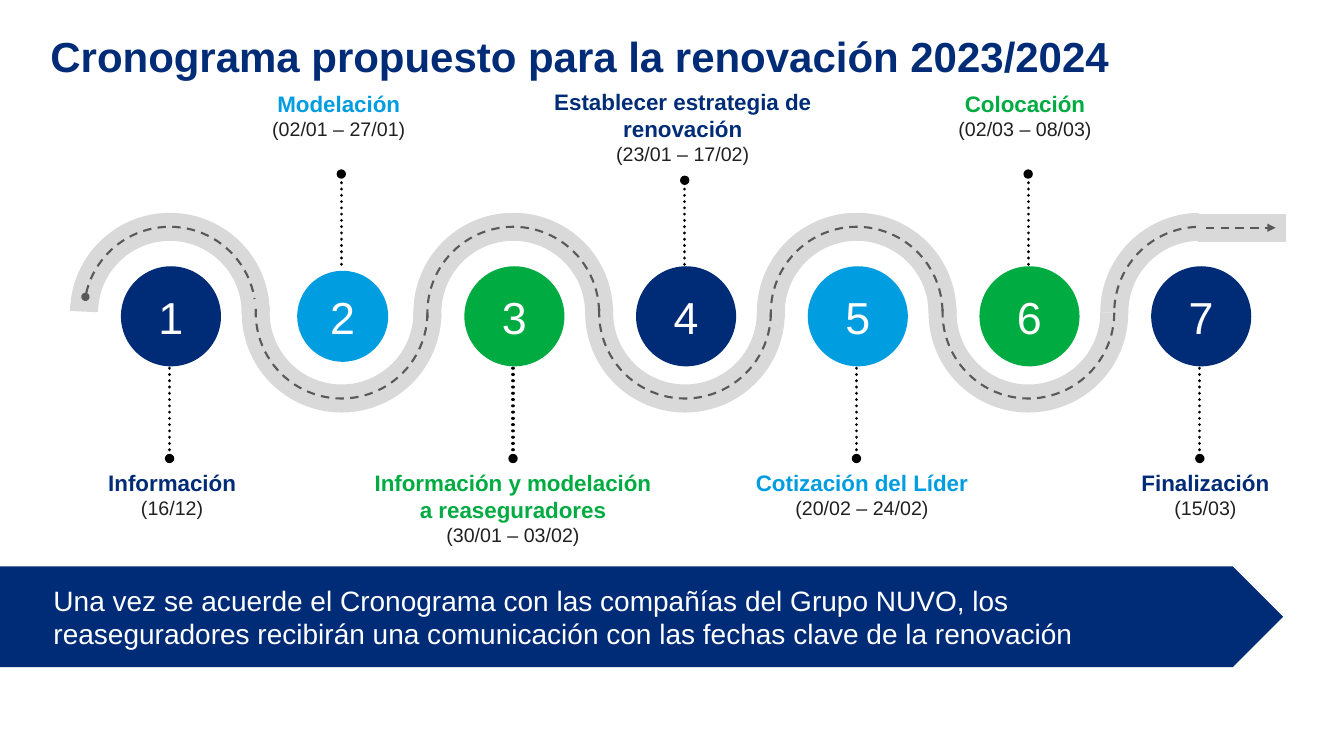
from lxml import etree
from pptx import Presentation
from pptx import util as u
from pptx.dml import color
from pptx.enum import dml, shapes, text
from pptx.oxml import ns

COLORS = {
    "navy": "002C77",
    "sky": "009DE0",
    "green": "00AC41",
    "road": "D9D9D9",
    "dash": "595959",
    "ink": "202020",
    "black": "000000",
    "white": "FFFFFF",
}
FONT = "Arial"
PITCH = 122.65
BADGE = 71.5
PIN = 64.5

STEPS = [
    ("Información", "(16/12)", "navy", 176, 1.8, 0, 0),
    ("Modelación", "(02/01 – 27/01)", "sky", 220, -1.8, 0, 3.25),
    ("Información y modelación a reaseguradores", "(30/01 – 03/02)", "green", 217, 0, 0, 0),
    ("Establecer estrategia de renovación", "(23/01 – 17/02)", "navy", 220, -1.4, 4.5, 0),
    ("Cotización del Líder", "(20/02 – 24/02)", "sky", 194, 4, 0, 0),
    ("Colocación", "(02/03 – 08/03)", "green", 220, -2.2, 0, 0),
    ("Finalización", "(15/03)", "navy", 194, 4, 0, 0),
]


def rgb(name):
    return color.RGBColor.from_string(COLORS[name])


def pts(*lengths):
    return [u.Pt(length) for length in lengths]


def set_font(paragraph, size, name, bold=False):
    paragraph.font.name = FONT
    paragraph.font.size = u.Pt(size)
    paragraph.font.bold = bold
    paragraph.font.color.rgb = rgb(name)


def set_margins(frame, left=0, top=0, right=0, bottom=0):
    frame.margin_left, frame.margin_top, frame.margin_right, frame.margin_bottom = pts(
        left, top, right, bottom)


def stroke(part, name, width, dash=None, head=None, tail=None):
    part.line.color.rgb = rgb(name)
    part.line.width = u.Pt(width)
    if dash:
        part.line.dash_style = dash
    outline = part.element.spPr.find(ns.qn("a:ln"))
    if dash == dml.MSO_LINE.ROUND_DOT:
        outline.set("cap", "rnd")
    for tag, marker in (("a:headEnd", head), ("a:tailEnd", tail)):
        if marker:
            etree.SubElement(outline, ns.qn(tag), type=marker)


def add_line(slide, x1, y1, x2, y2, *style, **ends):
    line = slide.shapes.add_connector(shapes.MSO_CONNECTOR.STRAIGHT, *pts(x1, y1, x2, y2))
    stroke(line, *style, **ends)
    etree.SubElement(line.element.spPr, ns.qn("a:effectLst"))


def add_solid(slide, kind, name, *box):
    solid = slide.shapes.add_shape(kind, *pts(*box))
    solid.shadow.inherit = False
    solid.fill.solid()
    solid.fill.fore_color.rgb = rgb(name)
    solid.line.fill.background()
    return solid


def add_arc(slide, left, top, angles, *style, **ends):
    arc = slide.shapes.add_shape(shapes.MSO_SHAPE.ARC, *pts(left, top, PITCH, PITCH))
    arc.shadow.inherit = False
    arc.fill.background()
    for index, degrees in enumerate(angles):
        arc.adjustments[index] = degrees * 0.6
    stroke(arc, *style, **ends)


def add_title(slide, left, top, width, height):
    title = slide.shapes.title
    title.left, title.top, title.width, title.height = pts(left, top, width, height)
    frame = title.text_frame
    set_margins(frame)
    frame.word_wrap = True
    frame.vertical_anchor = text.MSO_ANCHOR.TOP
    frame.text = "Cronograma propuesto para la renovación 2023/2024"
    heading = frame.paragraphs[0]
    heading.alignment = text.PP_ALIGN.LEFT
    heading.line_spacing = 0.8
    set_font(heading, 30, "navy", True)


def add_road(slide, left, top):
    last = len(STEPS) - 1
    exit_x = left + last * PITCH + PITCH / 2
    for name, width, dash in (("road", 20, None), ("dash", 1.5, dml.MSO_LINE.DASH)):
        centre_line = dash is not None
        for index in range(last + 1):
            angles, head = (176.6, 0), None
            if index % 2:
                angles = (0, 183.4)
            elif index == 0:
                angles = (190.6, 350.8) if centre_line else (180.7, 0)
                head = "oval" if centre_line else None
            elif index == last:
                angles = (183, 268.5) if centre_line else (180, 269.2)
            add_arc(slide, left + index * PITCH, top, angles, name, width, dash, head=head)
        start, end = (4.2, 54) if centre_line else (-1.5, 61.5)
        add_line(slide, exit_x + start, top + 0.7, exit_x + end, top + 0.7,
                 name, width, dash, tail="triangle" if centre_line else None)


def add_label(slide, centre, top, width, heading, dates, name):
    label = slide.shapes.add_textbox(*pts(centre - width / 2, top, width, 44))
    frame = label.text_frame
    frame.word_wrap = True
    set_margins(frame, 7.2, 3.6, 7.2, 3.6)
    frame.text = f"{heading}\n{dates}"
    for paragraph in frame.paragraphs:
        paragraph.alignment = text.PP_ALIGN.CENTER
    set_font(frame.paragraphs[0], 16, name, True)
    set_font(frame.paragraphs[1], 14, "ink")
    frame.paragraphs[1].space_after = u.Pt(6)


def add_step(slide, number, left, top):
    heading, dates, name, width, shift, drop, inset = STEPS[number - 1]
    axis = left + BADGE / 2 - 1
    if number % 2:
        pin_start, pin_end, label_top = top + 72.8, top + 72.8 + PIN, top + 141.2
    else:
        pin_start = top - 1.4 + drop
        pin_end = pin_start - PIN
        label_top = top - 129.5 - (1.5 if drop else 0)
    add_line(slide, axis, pin_start, axis, pin_end,
             "black", 2.25, dml.MSO_LINE.ROUND_DOT, tail="oval")
    size = BADGE - 2 * inset
    badge = add_solid(slide, shapes.MSO_SHAPE.OVAL, name, left + inset, top + inset, size, size)
    frame = badge.text_frame
    set_margins(frame)
    frame.word_wrap = False
    frame.vertical_anchor = text.MSO_ANCHOR.MIDDLE
    frame.text = str(number)
    frame.paragraphs[0].alignment = text.PP_ALIGN.CENTER
    set_font(frame.paragraphs[0], 32, "white")
    add_label(slide, axis + shift, label_top, width, heading, dates, name)


def add_banner(slide, left, top, width, height):
    banner = add_solid(slide, shapes.MSO_SHAPE.PENTAGON, "navy", left, top, width, height)
    frame = banner.text_frame
    set_margins(frame, left=38.2, right=75.6)
    frame.word_wrap = True
    frame.vertical_anchor = text.MSO_ANCHOR.MIDDLE
    frame.text = ("Una vez se acuerde el Cronograma con las compañías del Grupo NUVO, los "
                  "reaseguradores recibirán una comunicación con las fechas clave de la renovación")
    frame.paragraphs[0].alignment = text.PP_ALIGN.LEFT
    set_font(frame.paragraphs[0], 20, "white")


def main():
    deck = Presentation()
    deck.slide_width, deck.slide_height = pts(960, 540)
    slide = deck.slides.add_slide(deck.slide_layouts[5])
    add_title(slide, 36, 28.8, 886, 39)
    add_road(slide, 60, 162)
    for number in range(1, len(STEPS) + 1):
        add_step(slide, number, 86.4 + (number - 1) * PITCH, 190.2)
    add_banner(slide, 0, 404.6, 916.6, 72)
    deck.save("out.pptx")


if __name__ == "__main__":
    main()
